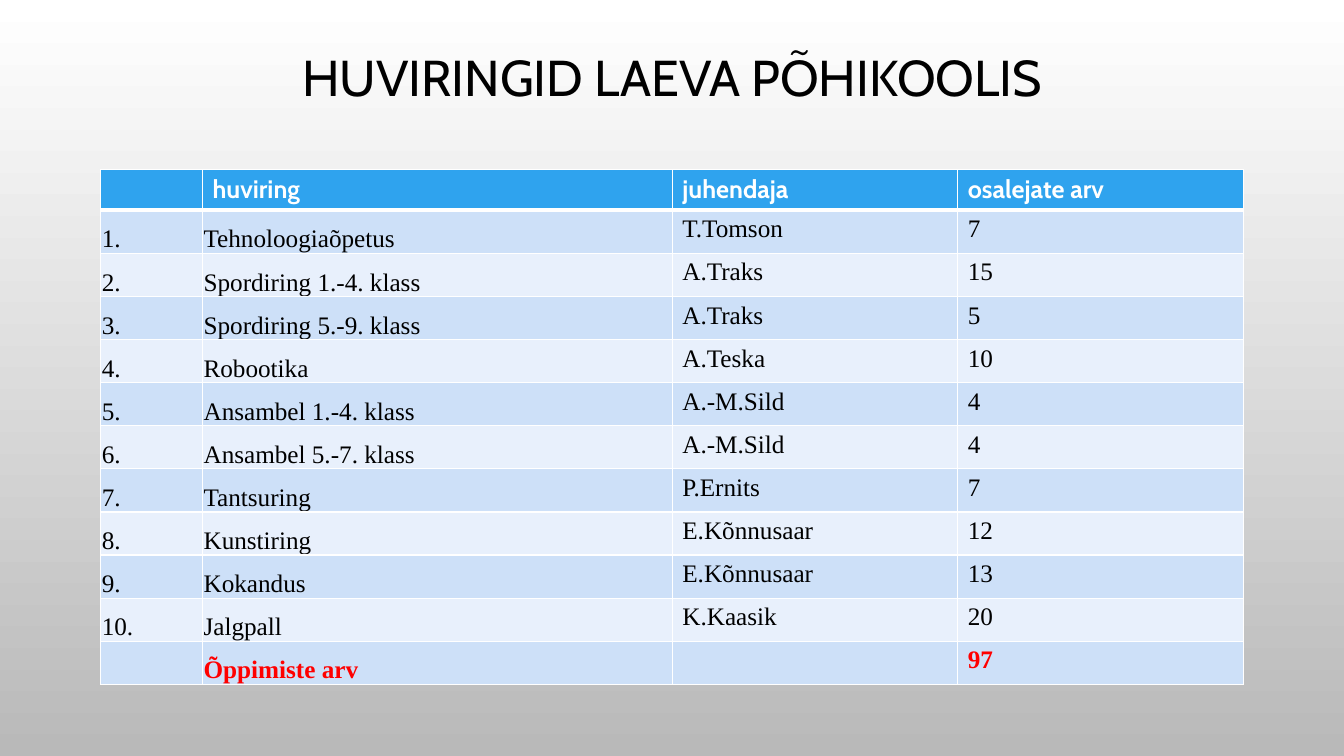
"""Build the slide listing the hobby groups of Laeva school."""
from dataclasses import dataclass

import pptx
import pptx.dml.color
import pptx.enum.text
import pptx.oxml.ns
import pptx.table
import pptx.text.text
import pptx.util
from lxml import etree

Pt = pptx.util.Pt
RGBColor = pptx.dml.color.RGBColor
Align = pptx.enum.text.PP_ALIGN
Anchor = pptx.enum.text.MSO_ANCHOR

BLACK = RGBColor(0x00, 0x00, 0x00)
WHITE = RGBColor(0xFF, 0xFF, 0xFF)
GREY = RGBColor(0xB9, 0xB9, 0xB9)
RED = RGBColor(0xFF, 0x00, 0x00)
HEADER_BLUE = RGBColor(0x2F, 0xA3, 0xEE)
BANDS = (RGBColor(0xCD, 0xE0, 0xF8), RGBColor(0xE8, 0xF0, 0xFC))

HEADING_FONT = "Cabin"
BODY_FONT = "Times New Roman"
COLUMN_WIDTHS = (72.72, 335.52, 203.88, 203.88)
HEADER_HEIGHT = 29.2
ROW_HEIGHT = 30.8
TIGHT_COLUMNS = 2


@dataclass(frozen=True)
class HobbyGroup:
    activity: str
    leader: str
    members: int


@dataclass(frozen=True)
class RowStyle:
    fill: RGBColor
    font: str = BODY_FONT
    color: RGBColor = BLACK
    bold: bool = False
    top: float = 1
    bottom: float = 1


HEADINGS = ("", "huviring", "juhendaja", "osalejate arv")
GROUPS = (
    HobbyGroup("Tehnoloogiaõpetus", "T.Tomson", 7),
    HobbyGroup("Spordiring 1.-4. klass", "A.Traks", 15),
    HobbyGroup("Spordiring 5.-9. klass", "A.Traks", 5),
    HobbyGroup("Robootika", "A.Teska", 10),
    HobbyGroup("Ansambel 1.-4. klass", "A.-M.Sild", 4),
    HobbyGroup("Ansambel 5.-7. klass", "A.-M.Sild", 4),
    HobbyGroup("Tantsuring", "P.Ernits", 7),
    HobbyGroup("Kunstiring", "E.Kõnnusaar", 12),
    HobbyGroup("Kokandus", "E.Kõnnusaar", 13),
    HobbyGroup("Jalgpall", "K.Kaasik", 20),
)


def write(frame: pptx.text.text.TextFrame, text: str, *, font: str, size: float,
          color: RGBColor, bold: bool = False, align: Align = Align.LEFT,
          spacing: float = 1.0) -> None:
    paragraph = frame.paragraphs[0]
    paragraph.alignment = align
    paragraph.line_spacing = spacing
    run = paragraph.add_run()
    run.text = text
    run.font.name = font
    run.font.size = Pt(size)
    run.font.bold = bold
    run.font.color.rgb = color


def add_borders(cell: pptx.table._Cell, top: float, bottom: float) -> None:
    properties = cell._tc.get_or_add_tcPr()
    qn = pptx.oxml.ns.qn
    for side, width in (("L", 1), ("R", 1), ("T", top), ("B", bottom)):
        line = etree.SubElement(properties, qn(f"a:ln{side}"), w=str(Pt(width)))
        solid = etree.SubElement(line, qn("a:solidFill"))
        etree.SubElement(solid, qn("a:srgbClr"), val=str(WHITE))


def fill_row(table: pptx.table.Table, index: int, texts: tuple[str, ...],
             style: RowStyle) -> None:
    for column, text in enumerate(texts):
        cell = table.cell(index, column)
        add_borders(cell, style.top, style.bottom)
        cell.fill.solid()
        cell.fill.fore_color.rgb = style.fill
        if not text:
            continue
        write(cell.text_frame, text, font=style.font, size=18,
              color=style.color, bold=style.bold)
        if index > 0 and column < TIGHT_COLUMNS:
            cell.vertical_anchor = Anchor.BOTTOM
            cell.margin_left = cell.margin_right = cell.margin_top = Pt(0.72)
            cell.margin_bottom = Pt(0)


def main() -> None:
    deck = pptx.Presentation()
    deck.slide_width, deck.slide_height = Pt(960), Pt(540)
    slide = deck.slides.add_slide(deck.slide_layouts[5])

    backdrop = slide.background.fill
    backdrop.gradient()
    backdrop.gradient_angle = 270
    for stop, color, position in zip(backdrop.gradient_stops, (WHITE, GREY), (0, 1)):
        stop.color.rgb = color
        stop.position = position

    title = slide.shapes.title
    title.left, title.top, title.width, title.height = Pt(72), Pt(30), Pt(816), Pt(54)
    title.text_frame.vertical_anchor = Anchor.MIDDLE
    title.text_frame.auto_size = pptx.enum.text.MSO_AUTO_SIZE.NONE
    write(title.text_frame, "HUVIRINGID LAEVA PÕHIKOOLIS", font=HEADING_FONT,
          size=36, color=BLACK, align=Align.CENTER, spacing=0.9)

    total_row = len(GROUPS) + 1
    groups_table = slide.shapes.add_table(
        total_row + 1, len(COLUMN_WIDTHS), Pt(72), Pt(121), Pt(sum(COLUMN_WIDTHS)),
        Pt(HEADER_HEIGHT + total_row * ROW_HEIGHT)).table
    for column, width in zip(groups_table.columns, COLUMN_WIDTHS):
        column.width = Pt(width)
    for index, row in enumerate(groups_table.rows):
        row.height = Pt(ROW_HEIGHT if index else HEADER_HEIGHT)

    fill_row(groups_table, 0, HEADINGS,
             RowStyle(HEADER_BLUE, HEADING_FONT, WHITE, bold=True, bottom=3))
    for number, group in enumerate(GROUPS, start=1):
        fill_row(groups_table, number,
                 (f"{number}.", group.activity, group.leader, str(group.members)),
                 RowStyle(BANDS[(number - 1) % 2], top=3 if number == 1 else 1))
    total = sum(group.members for group in GROUPS)
    fill_row(groups_table, total_row, ("", "Õppimiste arv", "", str(total)),
             RowStyle(BANDS[(total_row - 1) % 2], color=RED, bold=True))

    deck.save("out.pptx")


if __name__ == "__main__":
    main()
